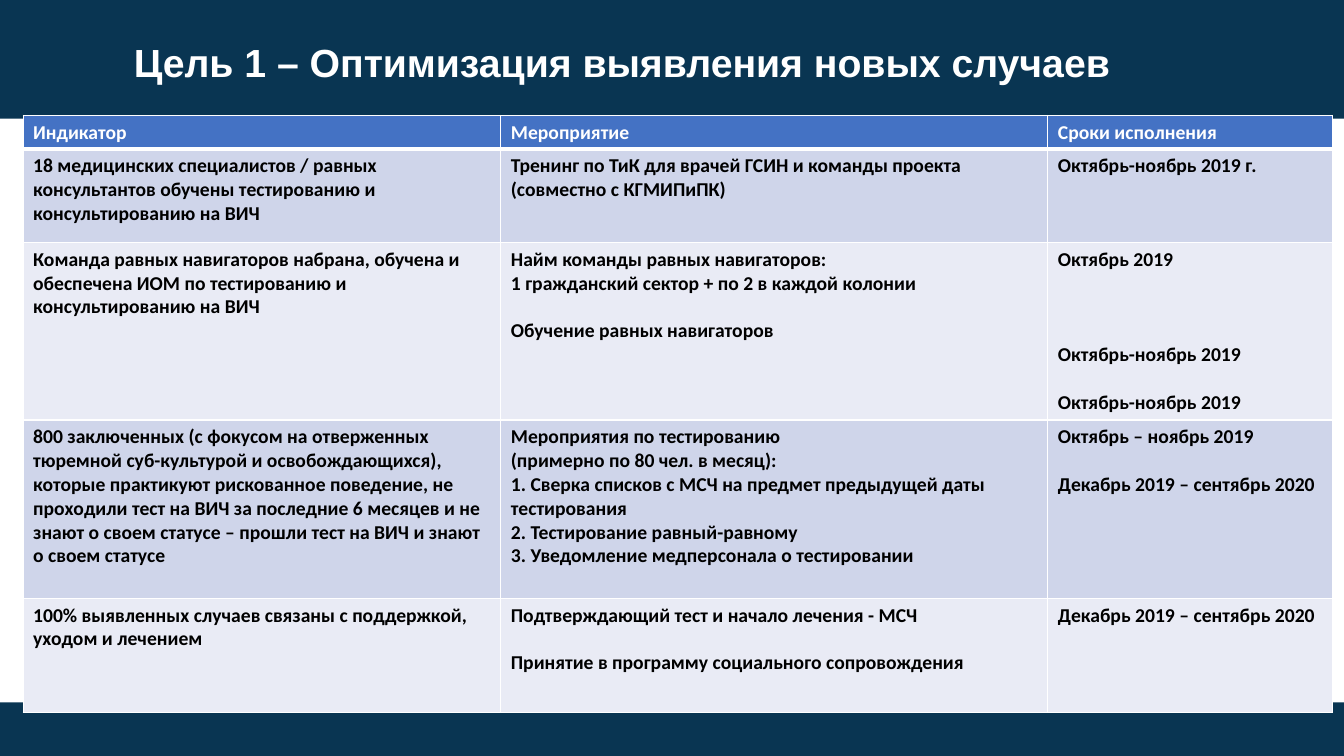
from dataclasses import dataclass

from lxml import etree
from pptx import Presentation
from pptx import util as u
from pptx.dml.color import RGBColor
from pptx.enum import shapes, text
from pptx.oxml.ns import qn


@dataclass(frozen=True)
class Theme:
    navy: str = "093552"
    header: str = "4472C4"
    bands: tuple[str, str] = ("CFD5EA", "E9EBF5")
    white: str = "FFFFFF"
    black: str = "000000"
    title_font: str = "Arial"
    body_font: str = "Calibri"
    title_size: int = 28
    body_size: int = 14
    line_pitch: int = 17
    rule: int = 1
    header_rule: int = 3


@dataclass(frozen=True)
class Box:
    left: int
    top: int
    width: int
    height: int


@dataclass(frozen=True)
class Line:
    words: str
    gap_lines: int = 0


@dataclass(frozen=True)
class Row:
    height: int
    cells: tuple[list[Line], ...]


THEME = Theme()
SLIDE = Box(0, 0, 1280, 720)
BANDS = [Box(0, 0, 1280, 113), Box(0, 669, 1280, 51)]
TITLE = Box(118, 0, 983, 94)
TITLE_TOP_INSET = 29
TABLE = Box(22, 110, 1247, 569)
COLUMNS = [455, 521, 271]

ROWS = [
    Row(32, ([Line("Индикатор")], [Line("Мероприятие")], [Line("Сроки исполнения")])),
    Row(89, (
        [Line("18 медицинских специалистов / равных консультантов обучены "
              "тестированию и консультированию на ВИЧ")],
        [Line("Тренинг по ТиК для врачей ГСИН и команды проекта (совместно с КГМИПиПК)")],
        [Line("Октябрь-ноябрь 2019 г.")],
    )),
    Row(169, (
        [Line("Команда равных навигаторов набрана, обучена и обеспечена ИОМ "
              "по тестированию и консультированию на ВИЧ")],
        [Line("Найм команды равных навигаторов:"),
         Line("1 гражданский сектор + по 2 в каждой колонии"),
         Line("Обучение равных навигаторов", 1)],
        [Line("Октябрь 2019"),
         Line("Октябрь-ноябрь 2019", 3),
         Line("Октябрь-ноябрь 2019", 1)],
    )),
    Row(170, (
        [Line("800 заключенных (с фокусом на отверженных тюремной суб-культурой "
              "и освобождающихся), которые практикуют рискованное поведение, "
              "не проходили тест на ВИЧ за последние 6 месяцев и не знают о своем "
              "статусе – прошли тест на ВИЧ и знают о своем статусе")],
        [Line("Мероприятия по тестированию"),
         Line("(примерно по 80 чел. в месяц):"),
         Line("1. Сверка списков с МСЧ на предмет предыдущей даты тестирования"),
         Line("2. Тестирование равный-равному"),
         Line("3. Уведомление медперсонала о тестировании")],
        [Line("Октябрь – ноябрь 2019"), Line("Декабрь 2019 – сентябрь 2020", 1)],
    )),
    Row(109, (
        [Line("100% выявленных случаев связаны с поддержкой, уходом и лечением")],
        [Line("Подтверждающий тест и начало лечения - МСЧ"),
         Line("Принятие в программу социального сопровождения", 1)],
        [Line("Декабрь 2019 – сентябрь 2020")],
    )),
]


def px(n: int) -> u.Emu:
    return u.Emu(n * 9525)


def place(box: Box) -> tuple[u.Emu, ...]:
    return px(box.left), px(box.top), px(box.width), px(box.height)


def add_run(p, words: str, font: str, size: int, color: str) -> None:
    r = p.add_run()
    r.text = words
    r.font.name = font
    r.font.size = u.Pt(size)
    r.font.bold = True
    r.font.color.rgb = RGBColor.from_string(color)


def add_band(s, box: Box) -> None:
    sp = s.shapes.add_shape(shapes.MSO_SHAPE.RECTANGLE, *place(box))
    sp.shadow.inherit = False
    sp.fill.solid()
    sp.fill.fore_color.rgb = RGBColor.from_string(THEME.navy)
    sp.line.fill.background()


def add_title(s, words: str) -> None:
    tf = s.shapes.add_textbox(*place(TITLE)).text_frame
    tf.word_wrap = True
    tf.vertical_anchor = text.MSO_ANCHOR.MIDDLE
    tf.margin_top = px(TITLE_TOP_INSET)
    add_run(tf.paragraphs[0], words, THEME.title_font, THEME.title_size, THEME.white)


def add_border(cell, side: str, points: int) -> None:
    ln = etree.SubElement(cell._tc.get_or_add_tcPr(), qn(f"a:ln{side}"), w=str(u.Pt(points)))
    fill = etree.SubElement(ln, qn("a:solidFill"))
    etree.SubElement(fill, qn("a:srgbClr"), val=THEME.white)


def fill_cell(cell, lines: list[Line], row_index: int) -> None:
    is_header = row_index == 0
    thick = {(0, "B"), (1, "T")}
    for side in "LRTB":
        add_border(cell, side, THEME.header_rule if (row_index, side) in thick else THEME.rule)
    cell.fill.solid()
    cell.fill.fore_color.rgb = RGBColor.from_string(
        THEME.header if is_header else THEME.bands[(row_index - 1) % 2])
    tf = cell.text_frame
    for i, line in enumerate(lines):
        p = tf.add_paragraph() if i else tf.paragraphs[0]
        if line.gap_lines:
            p.space_before = u.Pt(line.gap_lines * THEME.line_pitch)
        add_run(p, line.words, THEME.body_font, THEME.body_size,
                THEME.white if is_header else THEME.black)


def add_plan(s) -> None:
    table = s.shapes.add_table(len(ROWS), len(COLUMNS), *place(TABLE)).table
    for column, width in zip(table.columns, COLUMNS):
        column.width = px(width)
    for i, row in enumerate(ROWS):
        table.rows[i].height = px(row.height)
        for j, lines in enumerate(row.cells):
            fill_cell(table.cell(i, j), lines, i)


def main() -> None:
    prs = Presentation()
    prs.slide_width, prs.slide_height = px(SLIDE.width), px(SLIDE.height)
    s = prs.slides.add_slide(prs.slide_layouts[6])
    s.background.fill.solid()
    s.background.fill.fore_color.rgb = RGBColor.from_string(THEME.white)
    for band in BANDS:
        add_band(s, band)
    add_title(s, "Цель 1 – Оптимизация выявления новых случаев")
    add_plan(s)
    prs.save("out.pptx")


if __name__ == "__main__":
    main()
